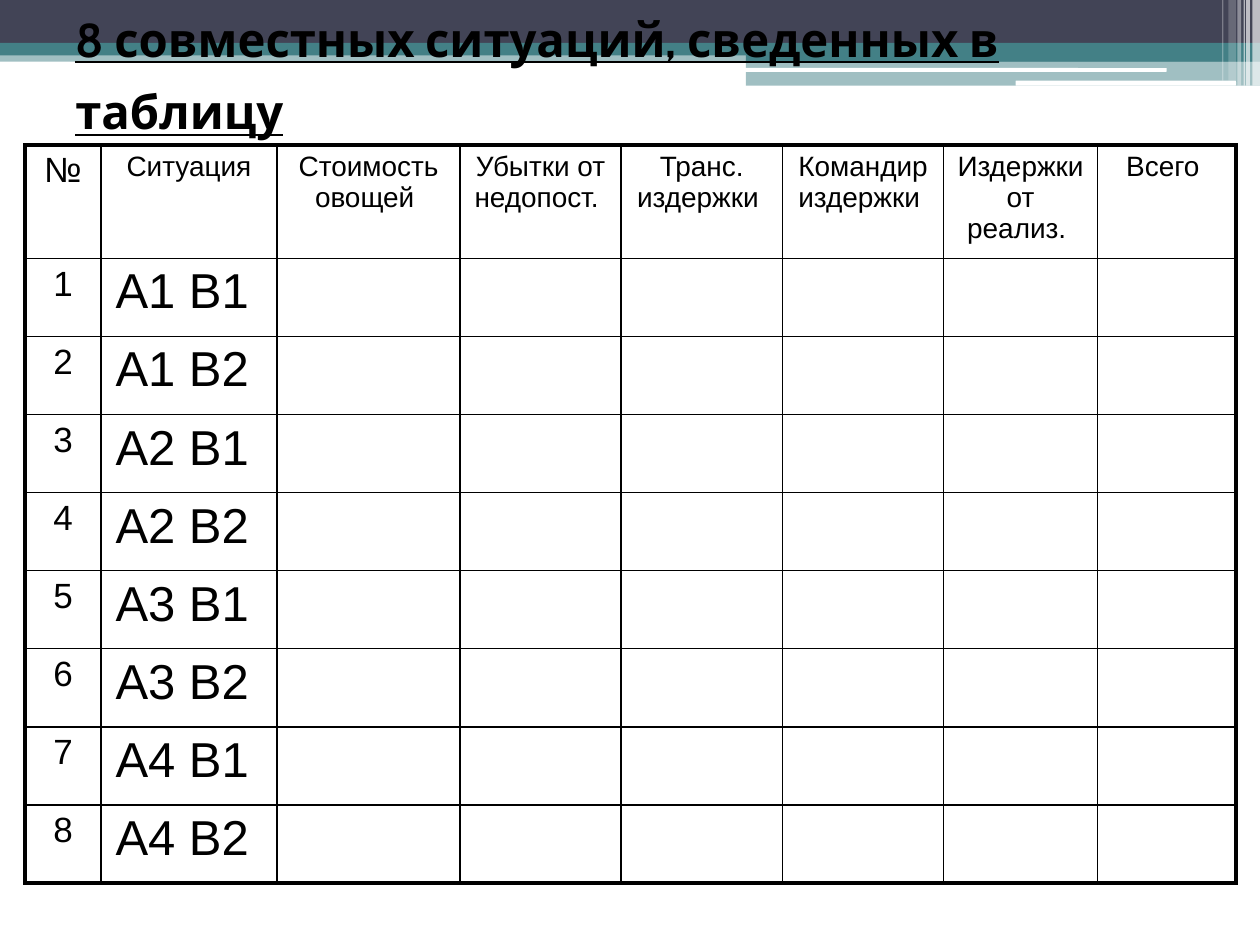
import lxml.etree
import pptx
import pptx.dml.color
import pptx.enum.shapes
import pptx.enum.text
import pptx.oxml.ns
import pptx.util
from pptx.util import Inches

qn = pptx.oxml.ns.qn


def paint(color_format, color):
    color_format.rgb = pptx.dml.color.RGBColor.from_string(color)


def draw_border(cell, side, width):
    """Add one black cell border; side is L, R, T or B and width is in points."""
    line = lxml.etree.SubElement(cell._tc.get_or_add_tcPr(), qn(f"a:ln{side}"), w=str(pptx.util.Pt(width)))
    solid = lxml.etree.SubElement(line, qn("a:solidFill"))
    lxml.etree.SubElement(solid, qn("a:srgbClr"), val="000000")


presentation = pptx.Presentation()
presentation.slide_width = Inches(10)
presentation.slide_height = Inches(7.5)
slide = presentation.slides.add_slide(presentation.slide_layouts[6])

# Header bands and stripes: left, top, width, height, colour, opacity, rounded
DARK, TEAL, WHITE = "424456", "438086", "FFFFFF"
header_parts = [
    (0, 0.4, 10, 0.09, TEAL, 50, False),
    (0, 0, 10, 0.34, DARK, 100, False),
    (0, 0.34, 10, 0.1, TEAL, 100, False),
    (5.92, 0.39, 4.08, 0.1, TEAL, 100, False),
    (5.92, 0.48, 4.08, 0.2, TEAL, 50, False),
    (5.91, 0.54, 3.35, 0.03, WHITE, 100, True),
    (8.06, 0.64, 1.75, 0.04, WHITE, 100, True),
    (9.94, 0, 0.06, 0.68, WHITE, 65, False),
    (9.89, 0, 0.03, 0.68, WHITE, 65, False),
    (9.87, 0, 0.01, 0.68, WHITE, 60, False),
    (9.82, 0, 0.03, 0.68, WHITE, 40, False),
    (9.75, 0, 0.06, 0.64, WHITE, 20, False),
    (9.7, 0, 0.01, 0.64, WHITE, 30, False),
]
preset = pptx.enum.shapes.MSO_SHAPE
for left, top, width, height, color, opacity, rounded in header_parts:
    stripe = slide.shapes.add_shape(
        preset.ROUNDED_RECTANGLE if rounded else preset.RECTANGLE,
        Inches(left), Inches(top), Inches(width), Inches(height))
    stripe.shadow.inherit = False
    stripe.line.fill.background()
    stripe.fill.solid()
    paint(stripe.fill.fore_color, color)
    if opacity < 100:
        swatch = stripe.fill._xPr.find(qn("a:solidFill"))[0]
        lxml.etree.SubElement(swatch, qn("a:alpha"), val=str(opacity * 1000))

# Title: the larger trailing space sets the height of its second line
title = slide.shapes.add_textbox(Inches(0.5), Inches(0.3), Inches(9), Inches(0.61))
title.text_frame.word_wrap = True
title.text_frame.vertical_anchor = pptx.enum.text.MSO_ANCHOR.MIDDLE
heading = title.text_frame.paragraphs[0]
for words, size, color, strong in [
    ("8 совместных ситуаций, сведенных в таблицу", 27, "000000", True),
    (" ", 36, DARK, False),
]:
    run = heading.add_run()
    run.text = words
    run.font.name = "Cabin"
    run.font.size = pptx.util.Pt(size)
    run.font.bold = run.font.underline = strong
    paint(run.font.color, color)

# Table of situations
headers = ["№", "Ситуация", "Стоимость овощей ", "Убытки от недопост. ", "Транс. издержки ",
           "Командир издержки ", "Издержки от реализ. ", "Всего "]
column_widths = [0.6, 1.4, 1.45, 1.28, 1.28, 1.28, 1.22, 1.1]
situations = [f"А{a} В{b} " for a in range(1, 5) for b in range(1, 3)]
rows = [headers] + [[str(number), situation] + [""] * 6
                    for number, situation in enumerate(situations, 1)]
row_heights = [0.9] + [0.62] * len(situations)

table = slide.shapes.add_table(
    len(rows), len(headers), Inches(0.2), Inches(1.15),
    Inches(sum(column_widths)), Inches(sum(row_heights))).table
table.first_row = table.horz_banding = False
for column, width in zip(table.columns, column_widths):
    column.width = Inches(width)
for row, height in zip(table.rows, row_heights):
    row.height = Inches(height)

last_row, last_column = len(rows) - 1, len(headers) - 1
for r, row_texts in enumerate(rows):
    for c, words in enumerate(row_texts):
        cell = table.cell(r, c)
        outer_edges = [("L", c == 0), ("R", c == last_column), ("T", r == 0), ("B", r == last_row)]
        for side, is_outer in outer_edges:
            draw_border(cell, side, 2.25 if is_outer else 1)
        cell.fill.background()
        if not words:
            continue
        size = 20 if c == 0 else 16 if r == 0 else 28
        paragraph = cell.text_frame.paragraphs[0]
        paragraph.text = words
        paragraph.alignment = pptx.enum.text.PP_ALIGN.CENTER
        paragraph.space_before = pptx.util.Pt(size * 0.2)
        font = paragraph.runs[0].font
        font.name = "Arial"
        font.size = pptx.util.Pt(size)
        paint(font.color, "000000")

presentation.save("out.pptx")
